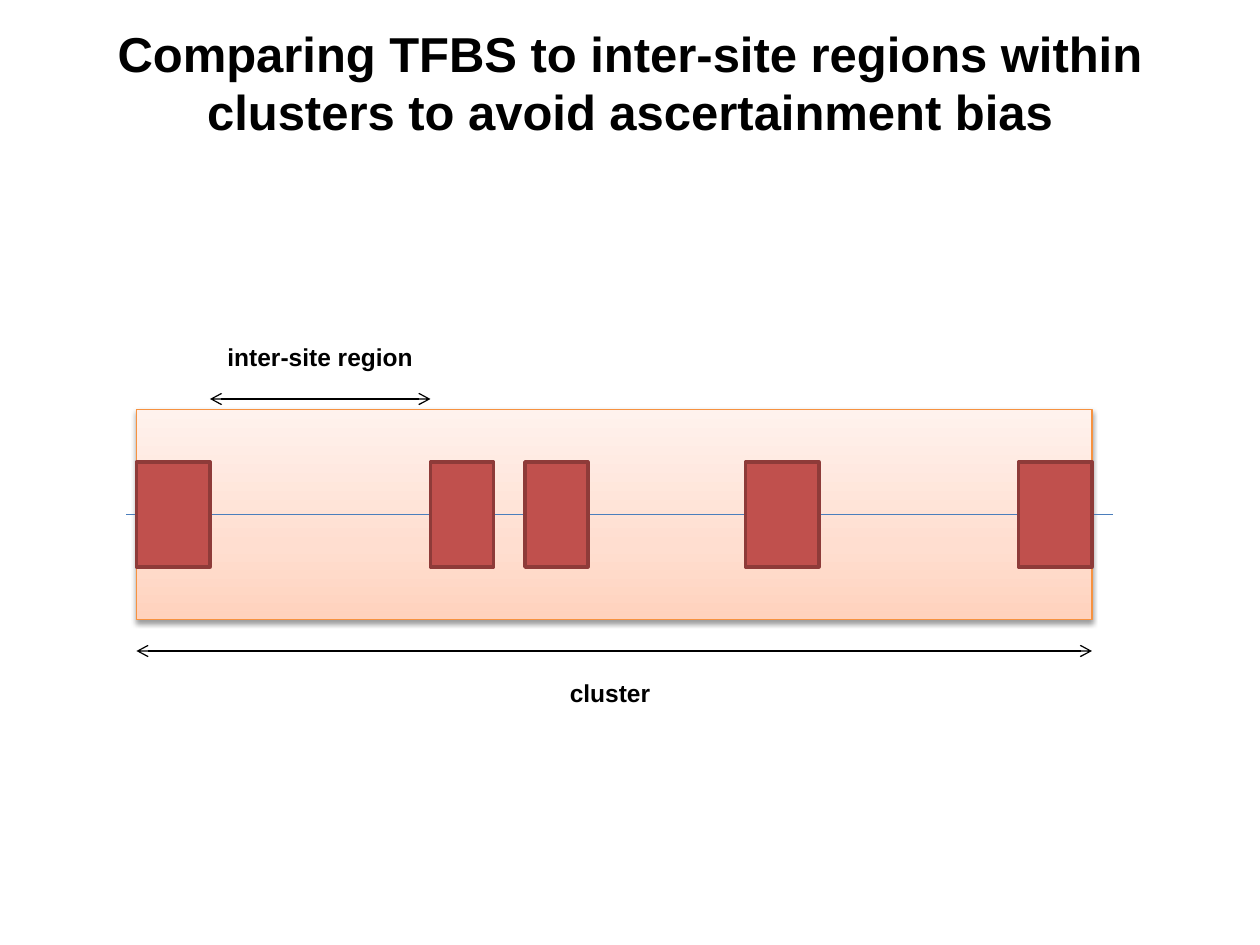
from pptx import Presentation
from pptx.dml.color import RGBColor as RGB
from pptx.enum.shapes import MSO_CONNECTOR as CONN, MSO_SHAPE as SHAPE
from pptx.enum.text import MSO_ANCHOR as ANCHOR, MSO_AUTO_SIZE as AUTO, PP_ALIGN as ALIGN
from pptx.oxml import parse_xml
from pptx.oxml.ns import nsdecls, qn
from pptx.util import Pt
from copy import deepcopy
from lxml.etree import SubElement

PX = 7620  # EMU per px, 120 px to the inch
FONT = "Arial"
COLORS = {
    "text": "000000", "axis": "4B7EBC",
    "site": "C0504D", "site_line": "8E3B39",
    "cluster_line": "F69240", "shadow": "000000",
    "cluster_low": "FFD2BD", "cluster_mid": "FFDED0", "cluster_high": "FFF2ED",
}
CLUSTER_X, CLUSTER_Y, CLUSTER_W, CLUSTER_H = 130, 390, 910, 200
SITE_H = 100
SITES = [(130, 70), (410, 60), (500, 60), (710, 70), (970, 70)]  # left, width


def px(*lengths):
    return [n * PX for n in lengths]


def color(name):
    return RGB.from_string(COLORS[name])


def format_text(sp, text, size, wrap=True):
    tf = sp.text_frame
    tf.text = text
    tf.word_wrap = wrap
    tf.auto_size = AUTO.NONE
    tf.vertical_anchor = ANCHOR.TOP
    p = tf.paragraphs[0]
    p.alignment = ALIGN.CENTER
    font = p.runs[0].font
    font.name, font.size, font.bold = FONT, Pt(size), True
    font.color.rgb = color("text")


def add_title(slide, text):
    sp = slide.shapes.title
    sp.left, sp.top, sp.width, sp.height = px(20, 16, 1160, 125)
    format_text(sp, text, 28)


def add_label(slide, text, x, y, w, h, wrap=True):
    format_text(slide.shapes.add_textbox(*px(x, y, w, h)), text, 14, wrap)


def add_rect(slide, x, y, w, h, line, weight):
    sp = slide.shapes.add_shape(SHAPE.RECTANGLE, *px(x, y, w, h))
    sp.shadow.inherit = False
    sp.line.color.rgb = color(line)
    sp.line.width = Pt(weight)
    return sp


def add_cluster(slide):
    sp = add_rect(slide, CLUSTER_X, CLUSTER_Y, CLUSTER_W, CLUSTER_H, "cluster_line", 0.75)
    # Three-stop gradient, rising from the bottom edge
    fill = sp.fill
    fill.gradient()
    fill.gradient_angle = 90
    stops = sp._element.spPr.find(".//" + qn("a:gsLst"))
    stops.append(deepcopy(stops[0]))
    names = ("cluster_low", "cluster_mid", "cluster_high")
    for stop, name, position in zip(fill.gradient_stops, names, (0, 0.35, 1)):
        stop.color.rgb = color(name)
        stop.position = position
    # Soft shadow below
    effects = sp._element.spPr.find(qn("a:effectLst"))
    effects.append(parse_xml(
        f'<a:outerShdw {nsdecls("a")} blurRad="{Pt(3.1)}" dist="{Pt(1.6)}" dir="5400000" '
        f'rotWithShape="0"><a:srgbClr val="{COLORS["shadow"]}"><a:alpha val="38000"/>'
        '</a:srgbClr></a:outerShdw>'))


def add_site(slide, x, w):
    y = CLUSTER_Y + (CLUSTER_H - SITE_H) // 2
    sp = add_rect(slide, x, y, w, SITE_H, "site_line", 2)
    sp.fill.solid()
    sp.fill.fore_color.rgb = color("site")


def add_line(slide, x1, x2, y, line, arrows=False):
    c = slide.shapes.add_connector(CONN.STRAIGHT, *px(x1, y, x2, y))
    c.line.color.rgb = color(line)
    c.line.width = Pt(0.75)
    if arrows:
        for end in ("a:headEnd", "a:tailEnd"):
            SubElement(c.line._get_or_add_ln(), qn(end), type="arrow")
    SubElement(c._element.spPr, qn("a:effectLst"))


def main():
    prs = Presentation()
    prs.slide_width, prs.slide_height = px(1200, 900)
    slide = prs.slides.add_slide(prs.slide_layouts[5])
    add_title(slide, "Comparing TFBS to inter-site regions within "
                     "clusters to avoid ascertainment bias")

    # Cluster with its binding sites along the sequence
    add_cluster(slide)
    add_line(slide, 120, 1060, CLUSTER_Y + CLUSTER_H // 2, "axis")
    for x, w in SITES:
        add_site(slide, x, w)

    # Extent of the cluster
    add_line(slide, CLUSTER_X, CLUSTER_X + CLUSTER_W, 620, "text", arrows=True)
    add_label(slide, "cluster", 530, 640, 102, 41, wrap=False)

    # Gap between the first two sites
    add_line(slide, sum(SITES[0]), SITES[1][0], 380, "text", arrows=True)
    add_label(slide, "inter-site region", 180, 320, 250, 41)

    prs.save("out.pptx")


if __name__ == "__main__":
    main()
